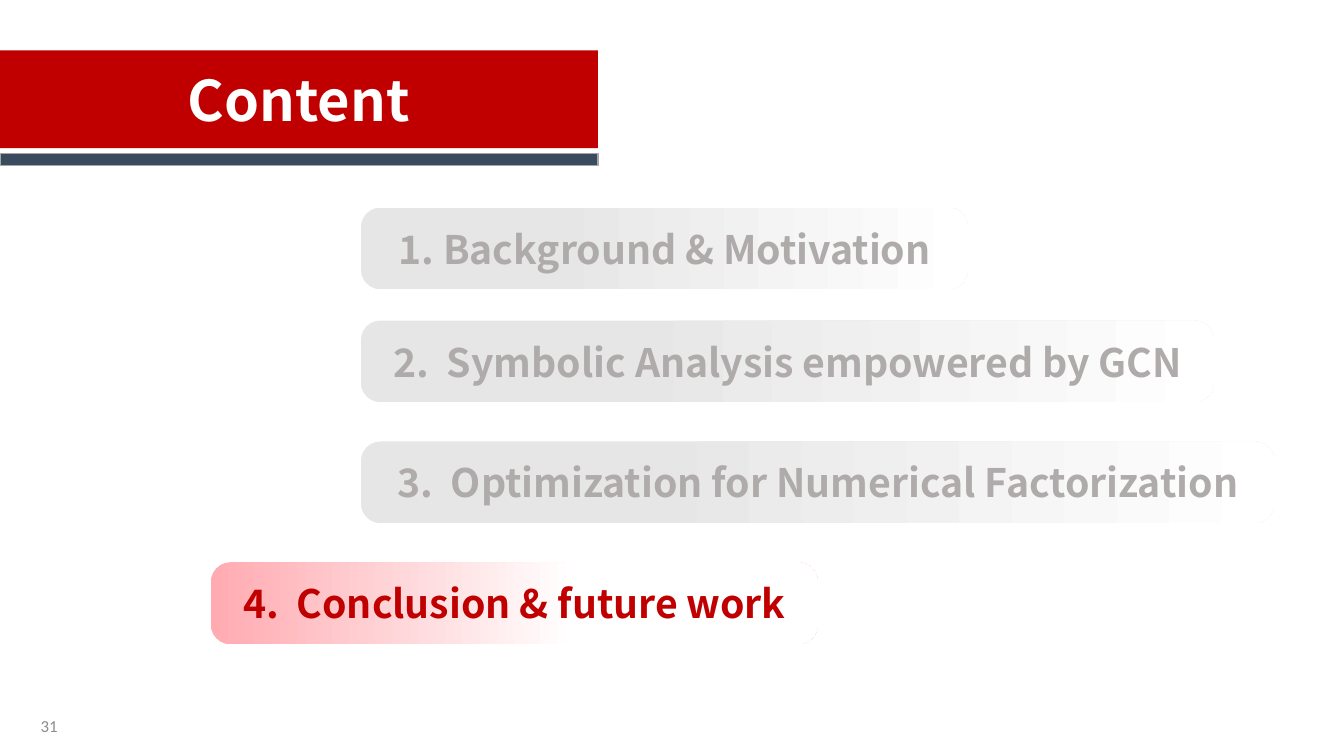
import pptx
import pptx.dml.color
import pptx.enum.shapes
import pptx.enum.text
import pptx.util

Inches = pptx.util.Inches
Pt = pptx.util.Pt
Rgb = pptx.dml.color.RGBColor.from_string
Shape = pptx.enum.shapes.MSO_SHAPE
Align = pptx.enum.text.PP_ALIGN
Anchor = pptx.enum.text.MSO_ANCHOR

theme = {
    "head": {"name": "Noto Sans CJK SC", "size": Pt(40), "bold": True},
    "item": {"name": "Noto Sans CJK SC", "size": Pt(28), "bold": True},
    "page": {"name": "Calibri", "size": Pt(12), "bold": False},
    "white": "FFFFFF",
    "red": "C00000",
    "navy": "3A4B5F",
    "edge": "A6A6A6",
    "muted": "AFABAB",
    "number": "8C8C8C",
    "idle": [(0.31, "E7E6E6"), (1, "FFFFFF")],
    "active": [(0, "FFABB1"), (0.6, "FFFFFF")],
}


def write(shape, text, style, color, align=Align.CENTER):
    frame = shape.text_frame
    frame.word_wrap = True
    frame.vertical_anchor = Anchor.MIDDLE
    para = frame.paragraphs[0]
    para.alignment = align
    run = para.add_run()
    run.text = text
    for key, value in theme[style].items():
        setattr(run.font, key, value)
    run.font.color.rgb = Rgb(theme[color])


def block(kind, left, top, width, height):
    shape = slide.shapes.add_shape(
        kind, Inches(left), Inches(top), Inches(width), Inches(height))
    shape.shadow.inherit = False
    shape.line.fill.background()
    return shape


deck = pptx.Presentation()
deck.slide_width = Inches(13.33)
deck.slide_height = Inches(7.5)
slide = deck.slides.add_slide(deck.slide_layouts[6])

# Agenda items: the current one is shifted left and red
items = [
    ("1. Background & Motivation", 3.58, 2.06, 6.02, "idle", "muted"),
    ("2.  Symbolic Analysis empowered by GCN", 3.58, 3.18, 8.46, "idle", "muted"),
    ("3.  Optimization for Numerical Factorization", 3.58, 4.38, 9.06, "idle", "muted"),
    ("4.  Conclusion & future work", 2.09, 5.58, 6.02, "active", "red"),
]
for text, left, top, width, fade, color in items:
    pill = block(Shape.ROUNDED_RECTANGLE, left, top, width, 0.81)
    pill.adjustments[0] = 0.24
    pill.fill.gradient()
    pill.fill.gradient_angle = 0
    for stop, (place, tint) in zip(pill.fill.gradient_stops, theme[fade]):
        stop.position = place
        stop.color.rgb = Rgb(tint)
    write(pill, text, "item", color)

# Title banner
banner = block(Shape.RECTANGLE, 0, 0.5, 5.93, 0.97)
banner.fill.solid()
banner.fill.fore_color.rgb = Rgb(theme["red"])
write(banner, "Content", "head", "white")

# Stripe under the banner
stripe = block(Shape.RECTANGLE, 0, 1.52, 5.93, 0.12)
stripe.fill.solid()
stripe.fill.fore_color.rgb = Rgb(theme["navy"])
stripe.line.color.rgb = Rgb(theme["edge"])
stripe.line.width = Pt(1)

# Page number
page = slide.shapes.add_textbox(Inches(0.17), Inches(7), Inches(0.5), Inches(0.4))
write(page, "31", "page", "number", Align.RIGHT)

deck.save("out.pptx")
